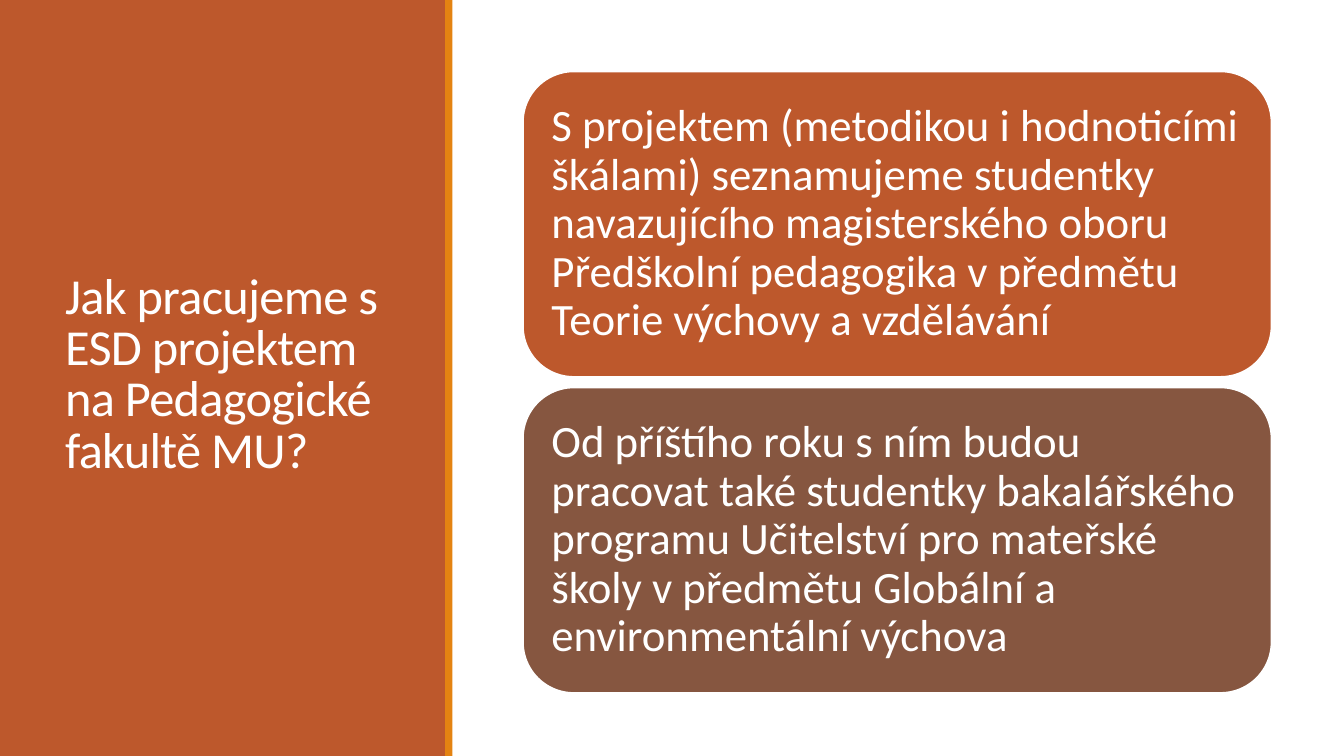
"""Build a slide with a coloured title panel and two rounded text cards."""
from dataclasses import dataclass

from pptx import Presentation
from pptx.dml.color import RGBColor
from pptx.enum.shapes import MSO_SHAPE
from pptx.enum.text import MSO_ANCHOR, PP_ALIGN
from pptx.oxml.ns import qn
from pptx.shapes.autoshape import Shape
from pptx.slide import Slide
from pptx.util import Emu, Pt

PX = 9525
RUST = RGBColor(0xBD, 0x58, 0x2C)
ORANGE = RGBColor(0xE4, 0x83, 0x12)
BROWN = RGBColor(0x86, 0x56, 0x40)
WHITE = RGBColor(0xFF, 0xFF, 0xFF)

CARD_LEFT, CARD_TOP, CARD_WIDTH, CARD_HEIGHT = 498, 68, 713, 291
CARD_STEP = 301


@dataclass(frozen=True)
class Card:
    text: str
    fill: RGBColor


TITLE = "Jak pracujeme s ESD projektem na Pedagogické fakultě MU?"
CARDS = [
    Card("S projektem (metodikou i hodnoticími škálami) seznamujeme studentky "
         "navazujícího magisterského oboru Předškolní pedagogika v předmětu "
         "Teorie výchovy a vzdělávání", RUST),
    Card("Od příštího roku s ním budou pracovat také studentky bakalářského "
         "programu Učitelství pro mateřské školy v předmětu Globální a "
         "environmentální výchova", BROWN),
]


def px(n: int) -> Emu:
    """Turn whole pixels into EMU."""
    return Emu(n * PX)


def add_block(s: Slide, kind: MSO_SHAPE, x: int, y: int, w: int, h: int,
              fill: RGBColor, line: RGBColor | None = None) -> Shape:
    """Add a filled shape, outlined only when a line colour is given."""
    sp = s.shapes.add_shape(kind, px(x), px(y), px(w), px(h))
    sp.shadow.inherit = False
    sp.fill.solid()
    sp.fill.fore_color.rgb = fill
    if line is None:
        sp.line.fill.background()
    else:
        sp.line.color.rgb = line
        sp.line.width = Pt(1.25)
    return sp


def set_text(sp: Shape, text: str, *, size: int, line_spacing: float,
             inset_x: int, inset_y: int, tracking: float = 0) -> None:
    """Write left-aligned, vertically centred white text into a shape."""
    tf = sp.text_frame
    tf.word_wrap = True
    tf.vertical_anchor = MSO_ANCHOR.MIDDLE
    tf.margin_left = tf.margin_right = px(inset_x)
    tf.margin_top = tf.margin_bottom = px(inset_y)
    p = tf.paragraphs[0]
    p.alignment = PP_ALIGN.LEFT
    p.line_spacing = line_spacing
    r = p.add_run()
    r.text = text
    r.font.name = "Calibri"
    r.font.size = Pt(size)
    r.font.color.rgb = WHITE
    if tracking:
        for props in sp.element.iter(qn("a:rPr")):
            props.set("spc", str(round(tracking * 100)))


def add_card(s: Slide, index: int, card: Card) -> None:
    """Add one rounded card at its place in the stack."""
    sp = add_block(s, MSO_SHAPE.ROUNDED_RECTANGLE, CARD_LEFT,
                   CARD_TOP + index * CARD_STEP, CARD_WIDTH, CARD_HEIGHT,
                   card.fill, WHITE)
    set_text(sp, card.text, size=32, line_spacing=0.9, inset_x=13, inset_y=13)


def main() -> None:
    """Build and save the slide."""
    prs = Presentation()
    prs.slide_width, prs.slide_height = px(1280), px(720)
    s = prs.slides.add_slide(prs.slide_layouts[6])
    add_block(s, MSO_SHAPE.RECTANGLE, 0, 0, 425, 720, RUST)
    title = s.shapes.add_textbox(px(52), px(55), px(324), px(606))
    set_text(title, TITLE, size=36, line_spacing=0.85, inset_x=10, inset_y=5,
             tracking=-0.5)
    add_block(s, MSO_SHAPE.RECTANGLE, 424, 0, 7, 720, ORANGE)
    for index, card in enumerate(CARDS):
        add_card(s, index, card)
    prs.save("out.pptx")


if __name__ == "__main__":
    main()
